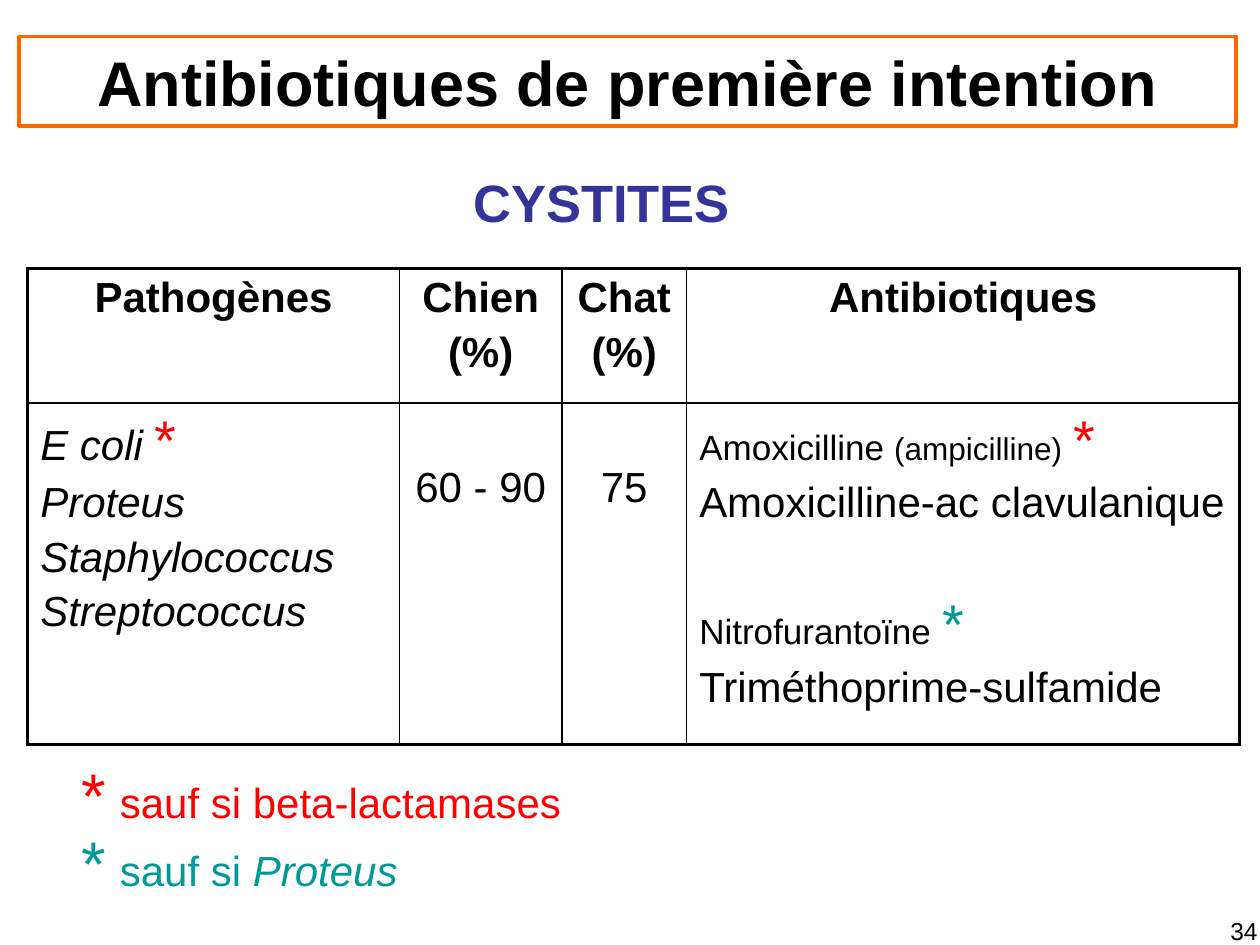
from lxml import etree
from pptx import Presentation
from pptx.dml.color import RGBColor
from pptx.enum.shapes import MSO_SHAPE
from pptx.enum.text import MSO_ANCHOR, MSO_AUTO_SIZE, PP_ALIGN
from pptx.oxml.ns import qn
from pptx.util import Inches, Pt

LEFT, CENTER, RIGHT = PP_ALIGN.LEFT, PP_ALIGN.CENTER, PP_ALIGN.RIGHT
TOP, MIDDLE = MSO_ANCHOR.TOP, MSO_ANCHOR.MIDDLE
BLACK, RED, TEAL, NAVY, ORANGE = "000000", "FF0000", "009999", "333399", "FF6600"

deck = Presentation()
deck.slide_width, deck.slide_height = Inches(10), Inches(7.5)
slide = deck.slides.add_slide(deck.slide_layouts[6])


def area(left, top, width, height):
    """Turn percentages of the slide into lengths."""
    across, down = deck.slide_width / 100, deck.slide_height / 100
    return [round(n) for n in (left * across, top * down, width * across, height * down)]


def write(frame, paragraphs, align=LEFT):
    """Each paragraph is (space before, runs); a run is (text, size, colour, style)."""
    for index, (gap, runs) in enumerate(paragraphs):
        paragraph = frame.add_paragraph() if index else frame.paragraphs[0]
        paragraph.alignment = align
        if index:
            paragraph.space_before = Pt(gap)
        for text, size, colour, style in runs:
            run = paragraph.add_run()
            run.text = text
            run.font.name = "Arial"
            run.font.size = Pt(size)
            run.font.bold = "b" in style
            run.font.italic = "i" in style
            run.font.color.rgb = RGBColor.from_string(colour)


# Title
title = slide.shapes.add_shape(MSO_SHAPE.RECTANGLE, *area(1.5, 3.87, 96.6, 9.47))
title.shadow.inherit = False
title.fill.background()
title.line.color.rgb = RGBColor.from_string(ORANGE)
title.line.width = Pt(2)
title.text_frame.vertical_anchor = MIDDLE
write(title.text_frame, [(0, [("Antibiotiques de première intention", 36, BLACK, "b")])], CENTER)

# Table of pathogens and antibiotics
GAP = 4.3
BLANK_LINE = 38.5
headings = [["Pathogènes"], ["Chien", "(%)"], ["Chat", "(%)"], ["Antibiotiques"]]
header_row = [[(GAP, [(line, 24, BLACK, "b")]) for line in lines] for lines in headings]
pathogens = [(GAP, [("E coli ", 24, BLACK, "i"), ("*", 32, RED, "")])]
pathogens += [(GAP, [(name, 24, BLACK, "i")])
              for name in ("Proteus", "Staphylococcus", "Streptococcus")]
antibiotics = [
    (GAP, [("Amoxicilline ", 20, BLACK, ""), ("(ampicilline)", 18, BLACK, ""),
           (" ", 24, BLACK, ""), ("*", 32, RED, "")]),
    (GAP, [("Amoxicilline-ac clavulanique", 24, BLACK, "")]),
    (BLANK_LINE, [("Nitrofurantoïne", 20, BLACK, ""), (" ", 24, BLACK, ""),
                  ("*", 32, TEAL, "")]),
    (GAP, [("Triméthoprime-sulfamide", 24, BLACK, "")]),
]
shares = [[(GAP, [(share, 24, BLACK, "")])] for share in ("60 - 90", "75")]
rows = [header_row, [pathogens, *shares, antibiotics]]
column_shares = [29.5, 12.9, 9.9, 43.9]
row_shares = [14.27, 36.13]

table = slide.shapes.add_table(2, 4, *area(2.2, 28.4, sum(column_shares), sum(row_shares))).table
table.first_row = table.horz_banding = False
for column, share in zip(table.columns, column_shares):
    column.width = round(deck.slide_width * share / 100)
for row, share in zip(table.rows, row_shares):
    row.height = round(deck.slide_height * share / 100)

for r, row in enumerate(rows):
    for c, paragraphs in enumerate(row):
        cell = table.cell(r, c)
        is_share = r == 1 and c in (1, 2)
        cell.margin_top = Inches(0.49 if is_share else 0.05)
        write(cell.text_frame, paragraphs, CENTER if r == 0 or is_share else LEFT)
        outer_sides = {"L": c == 0, "R": c == 3, "T": r == 0, "B": r == 1}
        properties = cell._tc.get_or_add_tcPr()
        for side, outer in outer_sides.items():
            border = etree.SubElement(properties, qn(f"a:ln{side}"),
                                      w=str(Pt(2.25 if outer else 1)))
            ink = etree.SubElement(border, qn("a:solidFill"))
            etree.SubElement(ink, qn("a:srgbClr"), val=BLACK)
        cell.fill.background()

# Subtitle, footnotes and page number: place, runs, alignment, anchor, wrap
texts = [
    ((5.5, 79.33, 40.1, 9.33),
     [("*", 36, RED, ""), (" ", 28, BLACK, ""), ("sauf si beta-lactamases", 24, RED, "")],
     LEFT, TOP, False),
    ((5.5, 86.53, 27.1, 9.33),
     [("*", 36, TEAL, ""), (" ", 28, TEAL, ""), ("sauf si ", 24, TEAL, ""),
      ("Proteus", 24, TEAL, "i")],
     LEFT, TOP, False),
    ((34.9, 17.33, 25.7, 8), [("CYSTITES", 30, NAVY, "b")], CENTER, MIDDLE, True),
    ((77.4, 96.27, 23.4, 5.47), [("34", 14, BLACK, "")], RIGHT, TOP, True),
]
for place, runs, align, anchor, wrap in texts:
    frame = slide.shapes.add_textbox(*area(*place)).text_frame
    frame.word_wrap = wrap
    frame.auto_size = MSO_AUTO_SIZE.NONE if wrap else MSO_AUTO_SIZE.SHAPE_TO_FIT_TEXT
    frame.vertical_anchor = anchor
    write(frame, [(0, runs)], align)

deck.save("out.pptx")
